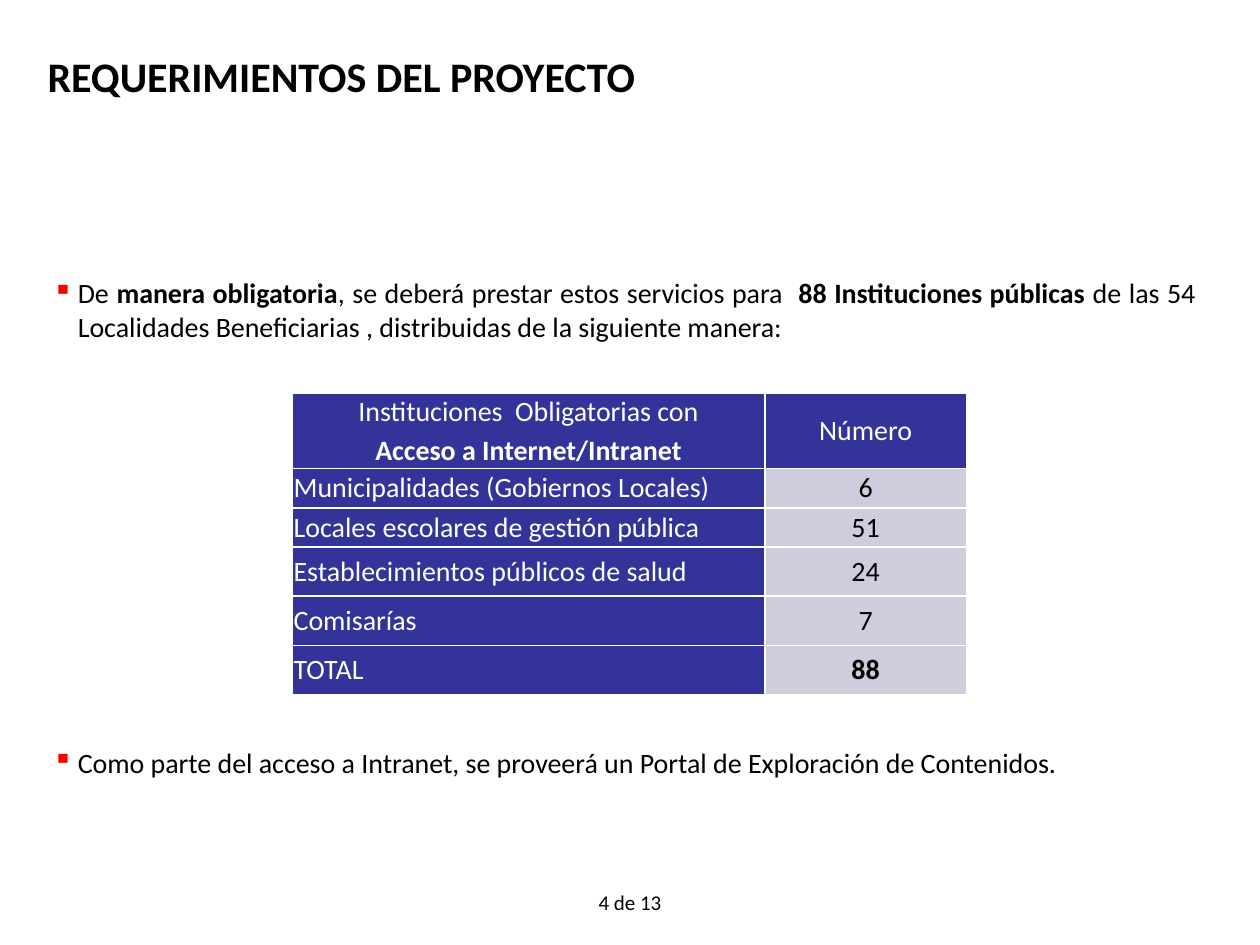
from dataclasses import dataclass

from lxml import etree
from pptx import Presentation
from pptx import util as u
from pptx.dml.color import RGBColor
from pptx.enum import text
from pptx.oxml import ns


@dataclass(frozen=True)
class Theme:
    """Colours, font and type sizes of the slide."""
    font: str = "Calibri"
    ink: str = "000000"
    paper: str = "FFFFFF"
    navy: str = "333399"
    lavender: str = "CDCDDE"
    bullet: str = "FF0000"
    title_size: int = 24
    body_size: int = 16
    footer_size: int = 12


THEME = Theme()
ALIGN = text.PP_ALIGN
REQUIREMENT = [
    ("De ", False),
    ("manera obligatoria", True),
    (", se deberá prestar estos servicios para  ", False),
    ("88 Instituciones públicas ", True),
    ("de las 54 Localidades Beneficiarias , distribuidas de la siguiente manera:", False),
]
PORTAL = [("Como parte del acceso a Intranet, se proveerá un Portal de "
           "Exploración de Contenidos.", False)]
HEADINGS = [
    [("Instituciones  Obligatorias con", False), ("Acceso a Internet/Intranet", True)],
    [("Número", False)],
]
INSTITUTIONS = [
    ("Municipalidades (Gobiernos Locales)", 6, 0.79),
    ("Locales escolares de gestión pública", 51, 0.79),
    ("Establecimientos públicos de salud", 24, 0.99),
    ("Comisarías", 7, 0.99),
    ("TOTAL", 88, 0.99),
]


def add_element(parent, tag, **attributes):
    """Append a DrawingML element to a parent."""
    return etree.SubElement(parent, ns.qn(tag), attributes)


def write(paragraph, runs, size=THEME.body_size, color=THEME.ink,
          align=ALIGN.LEFT, before=0, bulleted=False):
    """Fill a paragraph with (wording, bold) runs in one format."""
    if bulleted:
        properties = paragraph._p.get_or_add_pPr()
        properties.set("marL", str(u.Cm(0.51)))
        properties.set("indent", str(-u.Cm(0.51)))
        add_element(add_element(properties, "a:buClr"), "a:srgbClr", val=THEME.bullet)
        add_element(properties, "a:buChar", char="▪")
    paragraph.alignment = align
    if before:
        paragraph.space_before = u.Pt(before)
    for wording, bold in runs:
        run = paragraph.add_run()
        run.text = wording
        run.font.name = THEME.font
        run.font.size = u.Pt(size)
        run.font.bold = bold
        run.font.color.rgb = RGBColor.from_string(color)


def add_frame(slide, left, top, width, height):
    """Add a wrapping text box, in centimetres, and return its frame."""
    frame = slide.shapes.add_textbox(*map(u.Cm, (left, top, width, height))).text_frame
    frame.word_wrap = True
    return frame


def add_title(slide, left, top, width, height):
    """Place the slide title."""
    frame = add_frame(slide, left, top, width, height)
    frame.vertical_anchor = text.MSO_ANCHOR.MIDDLE
    write(frame.paragraphs[0], [("REQUERIMIENTOS DEL PROYECTO", True)],
          size=THEME.title_size)


def add_requirements(slide, left, top, width, height):
    """Place the two bullets, leaving room for the table between them."""
    frame = add_frame(slide, left, top, width, height)
    frame.margin_top = u.Cm(0.84)
    frame.margin_right = u.Cm(0.41)
    write(frame.paragraphs[0], REQUIREMENT, align=ALIGN.JUSTIFY, bulleted=True)
    write(frame.add_paragraph(), PORTAL, align=ALIGN.JUSTIFY, before=230, bulleted=True)


def fill_cell(cell, lines, fill, color, align):
    """Write bordered cell content, one paragraph per (wording, bold) line."""
    cell.margin_left = cell.margin_right = u.Cm(0.03)
    cell.margin_top = cell.margin_bottom = u.Cm(0.03)
    cell.vertical_anchor = text.MSO_ANCHOR.MIDDLE
    cell.fill.solid()
    cell.fill.fore_color.rgb = RGBColor.from_string(fill)
    properties = cell._tc.get_or_add_tcPr()
    for position, side in enumerate(("a:lnL", "a:lnR", "a:lnT", "a:lnB")):
        border = add_element(properties, side, w=str(u.Pt(1)))
        add_element(add_element(border, "a:solidFill"), "a:srgbClr", val=THEME.paper)
        properties.insert(position, border)
    frame = cell.text_frame
    for index, line in enumerate(lines):
        paragraph = frame.add_paragraph() if index else frame.paragraphs[0]
        write(paragraph, [line], color=color, align=align, before=3.2 if index else 0)


def add_institutions(slide, left, top, width, height):
    """Place the table of institutions and their counts."""
    table = slide.shapes.add_table(len(INSTITUTIONS) + 1, 2,
                                   *map(u.Cm, (left, top, width, height))).table
    name_width = 9.53
    table.columns[0].width = u.Cm(name_width)
    table.columns[1].width = u.Cm(width - name_width)
    table.rows[0].height = u.Cm(height - sum(row[2] for row in INSTITUTIONS))
    for column, lines in enumerate(HEADINGS):
        fill_cell(table.cell(0, column), lines, THEME.navy, THEME.paper, ALIGN.CENTER)
    for index, (name, count, row_height) in enumerate(INSTITUTIONS, 1):
        table.rows[index].height = u.Cm(row_height)
        fill_cell(table.cell(index, 0), [(name, False)],
                  THEME.navy, THEME.paper, ALIGN.LEFT)
        fill_cell(table.cell(index, 1), [(str(count), name == "TOTAL")],
                  THEME.lavender, THEME.ink, ALIGN.CENTER)


def add_page_number(slide, left, top, width, height):
    """Place the page count at the foot."""
    frame = add_frame(slide, left, top, width, height)
    write(frame.paragraphs[0], [("4 de 13", False)],
          size=THEME.footer_size, align=ALIGN.CENTER)


def main():
    """Build and save the slide."""
    deck = Presentation()
    deck.slide_width, deck.slide_height = u.Cm(25.4), u.Cm(19.05)
    slide = deck.slides.add_slide(deck.slide_layouts[6])
    add_requirements(slide, 0.81, 4.72, 23.7, 12.07)
    add_institutions(slide, 5.89, 7.92, 13.59, 6.07)
    add_page_number(slide, 11.61, 17.81, 2.18, 0.99)
    add_title(slide, 0.71, 0.74, 12.7, 1.57)
    deck.save("out.pptx")


if __name__ == "__main__":
    main()
